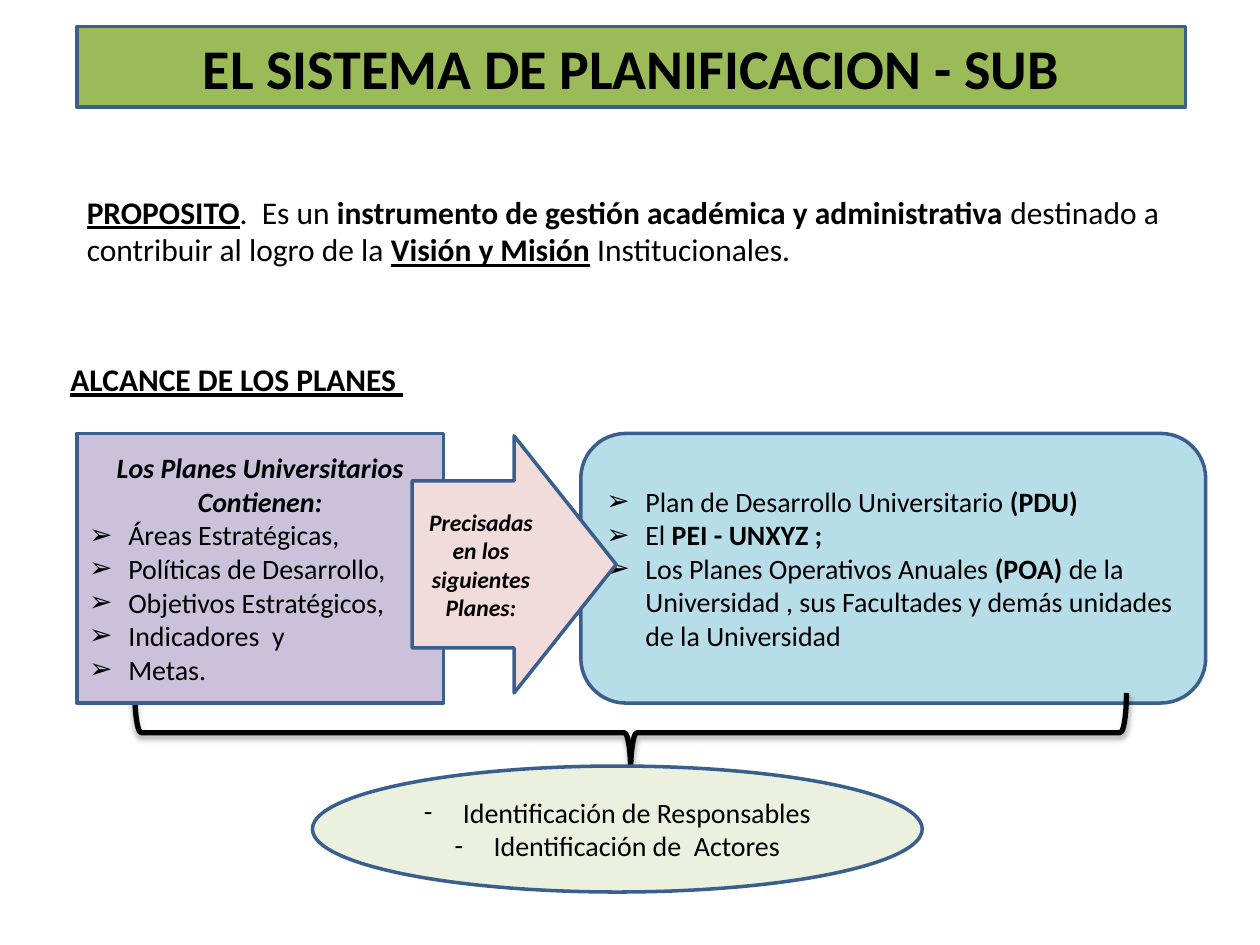
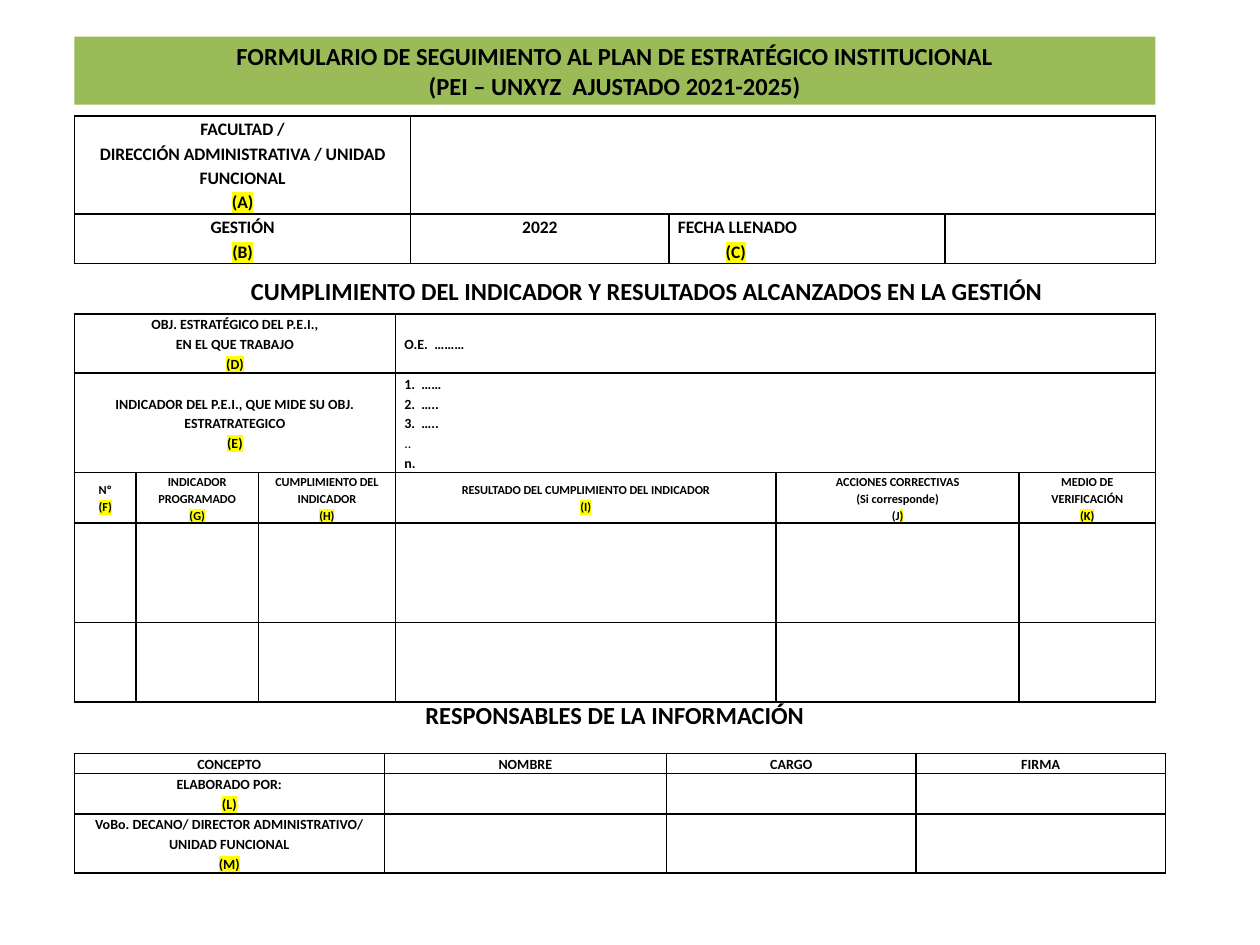
from dataclasses import dataclass

from lxml import etree
from pptx import Presentation
from pptx import util as u
from pptx.dml.color import RGBColor
from pptx.enum import shapes, text
from pptx.oxml import ns


@dataclass(frozen=True)
class Theme:
    font: str = "Calibri"
    black: str = "000000"
    green: str = "9BBB59"
    outline: str = "3A5F8C"
    blue: str = "B7DEE8"
    purple: str = "CCC1DA"
    pink: str = "F2DCDB"
    cream: str = "EBF1DE"
    marker: str = "FFFF00"
    banner: float = 32
    lead: float = 18
    body: float = 16
    arrow: float = 13.5
    heading: float = 14
    form: float = 10
    small: float = 8
    tiny: float = 7


theme = Theme()
CENTER, LEFT = text.PP_ALIGN.CENTER, text.PP_ALIGN.LEFT
MIDDLE, TOP = text.MSO_ANCHOR.MIDDLE, text.MSO_ANCHOR.TOP


def write(frame, lines, size, align=LEFT, anchor=MIDDLE, spacing=None):
    """Each line is a list of (words, flags): b bold, i italic, u underline, h highlight."""
    frame.word_wrap = True
    frame.vertical_anchor = anchor
    for number, line in enumerate(lines):
        paragraph = frame.add_paragraph() if number else frame.paragraphs[0]
        paragraph.alignment = align
        if spacing:
            paragraph.line_spacing = spacing
        for words, flags in line:
            run = paragraph.add_run()
            run.text = words
            font = run.font
            font.name, font.size = theme.font, u.Pt(size)
            font.bold, font.italic, font.underline = "b" in flags, "i" in flags, "u" in flags
            font.color.rgb = RGBColor.from_string(theme.black)
            if "h" in flags:
                highlight = etree.Element(ns.qn("a:highlight"))
                etree.SubElement(highlight, ns.qn("a:srgbClr"), val=theme.marker)
                run._r.rPr.find(ns.qn("a:solidFill")).addnext(highlight)


def indent(paragraph, left, first=0, bullet=None):
    properties = paragraph._p.get_or_add_pPr()
    properties.set("marL", str(u.Inches(left)))
    properties.set("indent", str(u.Inches(first)))
    if bullet:
        etree.SubElement(properties, ns.qn("a:buFont"), typeface=theme.font)
        etree.SubElement(properties, ns.qn("a:buChar"), char=bullet)


presentation = Presentation()
presentation.slide_width, presentation.slide_height = u.Inches(10), u.Inches(7.5)

# Green title bands
titles = [
    ((0.61, 0.21, 8.8, 0.64), theme.banner, theme.outline,
     ["EL SISTEMA DE PLANIFICACION - SUB"]),
    ((0.59, 0.29, 8.58, 0.54), theme.heading, None,
     ["FORMULARIO DE SEGUIMIENTO AL PLAN DE ESTRATÉGICO INSTITUCIONAL",
      "(PEI – UNXYZ  AJUSTADO 2021-2025)"]),
]
for box, size, outline, lines in titles:
    slide = presentation.slides.add_slide(presentation.slide_layouts[5])
    title = slide.shapes.title
    title.left, title.top, title.width, title.height = map(u.Inches, box)
    title.fill.solid()
    title.fill.fore_color.rgb = RGBColor.from_string(theme.green)
    if outline:
        title.line.color.rgb = RGBColor.from_string(outline)
        title.line.width = u.Pt(2)
    title.text_frame.auto_size = text.MSO_AUTO_SIZE.NONE
    title.text_frame.margin_top = title.text_frame.margin_bottom = 0
    write(title.text_frame, [[(line, "b")] for line in lines], size, CENTER)
system_slide, form_slide = presentation.slides

# Free text on both slides
purpose = [("PROPOSITO", "bu"), (".  Es un ", ""),
           ("instrumento de gestión académica y administrativa ", "b"),
           ("destinado a contribuir al logro de la ", ""),
           ("Visión y Misión", "bu"), (" Institucionales.", "")]
texts = [
    (system_slide, (0.59, 1.48, 8.98, 0.71), purpose, theme.lead, LEFT),
    (system_slide, (0.46, 2.81, 8.88, 0.41), [("ALCANCE DE LOS PLANES ", "bu")],
     theme.lead, LEFT),
    (form_slide, (1.83, 2.14, 6.61, 0.34),
     [("CUMPLIMIENTO DEL INDICADOR Y RESULTADOS ALCANZADOS EN LA GESTIÓN", "b")],
     theme.heading, CENTER),
    (form_slide, (0.59, 5.51, 8.58, 0.34), [("RESPONSABLES DE LA INFORMACIÓN", "b")],
     theme.heading, CENTER),
]
for slide, box, line, size, align in texts:
    textbox = slide.shapes.add_textbox(*map(u.Inches, box))
    write(textbox.text_frame, [line], size, align, TOP)

# Diagram: plans, arrow, brace and result
plans = [[("Plan de Desarrollo Universitario ", ""), ("(PDU)", "b")],
         [("El ", ""), ("PEI - UNXYZ ;", "b")],
         [("Los Planes Operativos Anuales ", ""), ("(POA) ", "b"),
          ("de la Universidad , sus Facultades y demás unidades de la Universidad", "")]]
contents = [[(item, "")] for item in (
    "Áreas Estratégicas,", "Políticas de Desarrollo,", "Objetivos Estratégicos,",
    "Indicadores  y", "Metas.")]
contents.insert(0, [("Los Planes Universitarios Contienen:", "bi")])
results = [[("Identificación de Responsables", "")], [("Identificación de  Actores", "")]]
kinds = shapes.MSO_SHAPE
diagram = [  # kind, box, fill, adjustments, lines, size, align, bullet
    (kinds.ROUNDED_RECTANGLE, (4.61, 3.44, 4.96, 2.14), theme.blue, [], plans,
     theme.body, LEFT, "➢"),
    (kinds.RIGHT_BRACE, (4.69, 1.88, 0.63, 7.87), None, [0.08, 0.5], [],
     theme.body, LEFT, None),
    (kinds.OVAL, (2.48, 6.08, 4.84, 1), theme.cream, [], results, theme.body, CENTER, "-"),
    (kinds.RECTANGLE, (0.61, 3.44, 2.91, 2.14), theme.purple, [], contents,
     theme.body, LEFT, "➢"),
    (kinds.RIGHT_ARROW, (3.27, 3.46, 1.62, 2.04), theme.pink, [0.65, 0.5],
     [[("Precisadas en los siguientes Planes:", "bi")]], theme.arrow, CENTER, None),
]
for kind, box, fill, adjustments, lines, size, align, bullet in diagram:
    shape = system_slide.shapes.add_shape(kind, *map(u.Inches, box))
    shape.shadow.inherit = False
    for number, value in enumerate(adjustments):
        shape.adjustments[number] = value
    shape.line.color.rgb = RGBColor.from_string(theme.outline if fill else theme.black)
    shape.line.width = u.Pt(2 if fill else 3)
    if fill:
        shape.fill.solid()
        shape.fill.fore_color.rgb = RGBColor.from_string(fill)
    else:  # the brace lies on its side and casts a soft shadow
        shape.fill.background()
        shape.rotation = 90
        effects = shape._element.spPr.find(ns.qn("a:effectLst"))
        shadow = etree.SubElement(
            effects, ns.qn("a:outerShdw"), blurRad=str(u.Pt(3.1)), dist=str(u.Pt(1.8)),
            dir="5400000", rotWithShape="0")
        color = etree.SubElement(shadow, ns.qn("a:srgbClr"), val=theme.black)
        etree.SubElement(color, ns.qn("a:alpha"), val="35000")
    write(shape.text_frame, lines, size, align)
    if bullet:
        for paragraph in shape.text_frame.paragraphs:
            if paragraph.runs[0].font.italic:
                paragraph.alignment = CENTER
            else:
                indent(paragraph, 0.31, -0.31, bullet)

# Form tables: asterisks enclose highlighted words, "<" starts a left-aligned cell
tables = [  # top, columns, rows, merges, cells, size of each row
    (0.92, [2.67, 2.05, 2.19, 1.67], [0.78, 0.39], [(0, 1, 3)],
     {(0, 0): "FACULTAD /\nDIRECCIÓN ADMINISTRATIVA / UNIDAD FUNCIONAL\n*(A)*",
      (1, 0): "GESTIÓN\n*(B)*", (1, 1): "2022", (1, 2): "<FECHA LLENADO\n*(C)*"},
     [theme.form] * 2),
    (2.49, [0.49, 0.97, 1.09, 3.02, 1.93, 1.08], [0.47, 0.79, 0.4, 0.79, 0.63],
     [(0, 0, 2), (0, 3, 5), (1, 0, 2), (1, 3, 5)],
     {(0, 0): "OBJ. ESTRATÉGICO DEL P.E.I.,\nEN EL QUE TRABAJO\n*(D)*",
      (0, 3): "<O.E.  ………",
      (1, 0): "INDICADOR DEL P.E.I., QUE MIDE SU OBJ. ESTRATRATEGICO\n*(E)*",
      (1, 3): "<1.  ……\n2.  …..\n3.  …..\n..\nn.",
      (2, 0): "Nº\n*(F)*", (2, 1): "INDICADOR PROGRAMADO\n*(G)*",
      (2, 2): "CUMPLIMIENTO DEL INDICADOR\n*(H)*",
      (2, 3): "RESULTADO DEL CUMPLIMIENTO DEL INDICADOR\n*(I)*",
      (2, 4): "ACCIONES CORRECTIVAS\n(Si corresponde)\n(J*)*",
      (2, 5): "MEDIO DE VERIFICACIÓN\n*(K)*"},
     [theme.small, theme.small, theme.tiny, theme.tiny, theme.tiny]),
    (5.98, [2.46, 2.24, 1.98, 1.98], [0.16, 0.32, 0.47], [],
     {(0, 0): "CONCEPTO", (0, 1): "NOMBRE", (0, 2): "CARGO", (0, 3): "FIRMA",
      (1, 0): "ELABORADO POR:\n*(L)*",
      (2, 0): "VoBo. DECANO/ DIRECTOR ADMINISTRATIVO/ UNIDAD FUNCIONAL\n*(M)*"},
     [theme.small] * 3),
]
for top, columns, rows, merges, cells, sizes in tables:
    frame = form_slide.shapes.add_table(
        len(rows), len(columns), u.Inches(0.59), u.Inches(top),
        u.Inches(sum(columns)), u.Inches(sum(rows)))
    table = frame.table
    table.first_row = table.horz_banding = False
    for column, width in zip(table.columns, columns):
        column.width = u.Inches(width)
    for row, height in zip(table.rows, rows):
        row.height = u.Inches(height)
    for row, first, last in merges:
        table.cell(row, first).merge(table.cell(row, last))
    for row in range(len(rows)):
        for column in range(len(columns)):
            cell = table.cell(row, column)
            cell.margin_left = cell.margin_right = u.Inches(0.07)
            cell.margin_top = cell.margin_bottom = 0
            cell.fill.background()
            for place, side in enumerate(("lnL", "lnR", "lnT", "lnB")):
                border = etree.Element(ns.qn("a:" + side), w=str(u.Pt(1)))
                paint = etree.SubElement(border, ns.qn("a:solidFill"))
                etree.SubElement(paint, ns.qn("a:srgbClr"), val=theme.black)
                cell._tc.get_or_add_tcPr().insert(place, border)
            words = cells.get((row, column))
            if not words:
                continue
            lines = [[(piece, "bh" if number % 2 else "" if piece == ".." else "b")
                      for number, piece in enumerate(line.split("*")) if piece]
                     for line in words.lstrip("<").split("\n")]
            align = LEFT if words.startswith("<") else CENTER
            write(cell.text_frame, lines, sizes[row], align, TOP, 1.15)
            cell.vertical_anchor = TOP if sizes[row] == theme.form else MIDDLE
            if words.endswith("*(C)*"):
                indent(cell.text_frame.paragraphs[-1], 0.38)

presentation.save("out.pptx")
